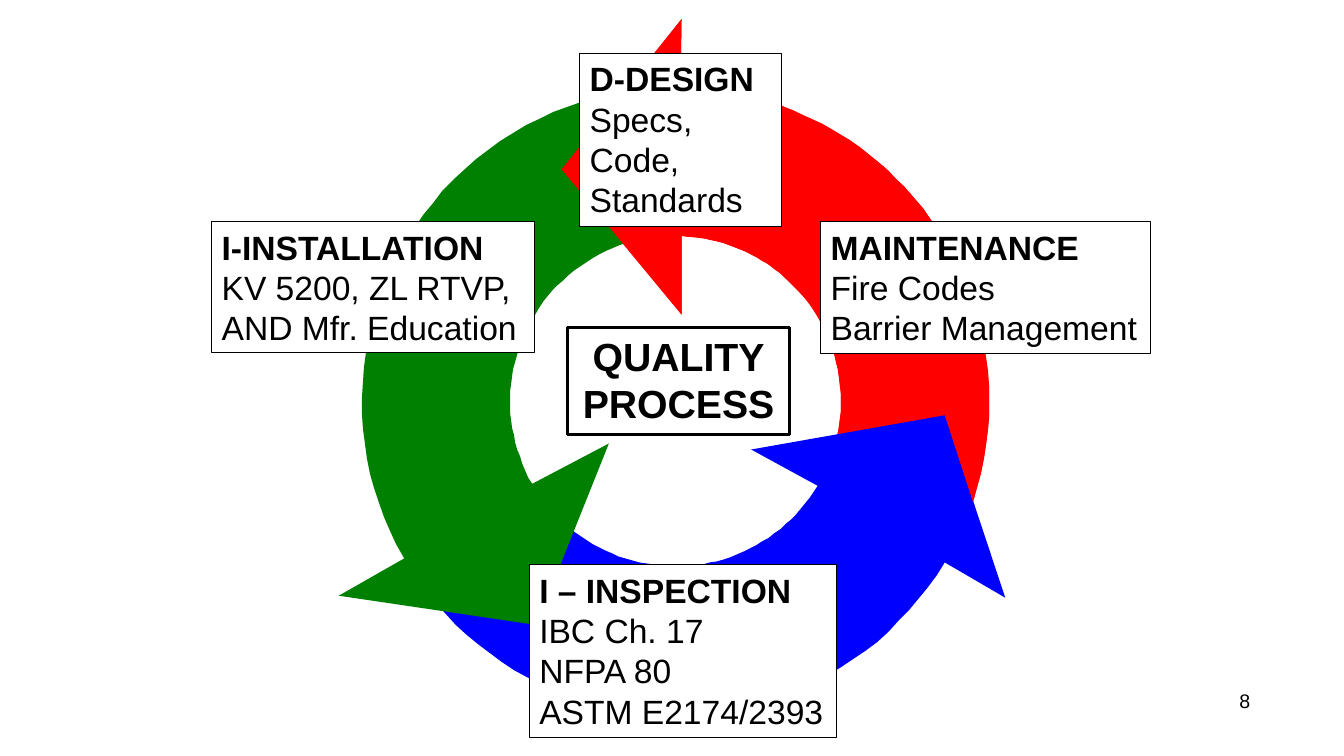
from math import cos, radians, sin

from pptx import Presentation
from pptx import util as u
from pptx.dml.color import RGBColor
from pptx.enum import shapes, text

PX = 9144  # EMU per px, 100 px to the inch
FONT = "Arial"
BLACK = RGBColor(0, 0, 0)
WHITE = RGBColor(255, 255, 255)
RED = RGBColor(255, 0, 0)
GREEN = RGBColor(0, 128, 0)
BLUE = RGBColor(0, 0, 255)
ARC_STEPS = 40


def px(length):
    return u.Emu(length * PX)


def arc(radius, start, end):
    """Points of an arc around (0, 0), in degrees clockwise from the right."""
    angles = [radians(start + (end - start) * i / ARC_STEPS) for i in range(ARC_STEPS + 1)]
    return [(radius * cos(a), radius * sin(a)) for a in angles]


def add_ring_arrow(slide, box, colour, outer, inner, head, notch=()):
    """Arc angles run from tail to head; head and notch are offsets from the centre."""
    left, top, size, band = box
    radius = size / 2
    outline = arc(radius, *outer) + head + arc(radius - band, *inner)[::-1] + list(notch)
    points = [(round(left + radius + x), round(top + radius + y)) for x, y in outline]
    builder = slide.shapes.build_freeform(*points[0], scale=PX)
    builder.add_line_segments(points[1:], close=True)
    arrow = builder.convert_to_shape()
    arrow.shadow.inherit = False
    arrow.fill.solid()
    arrow.fill.fore_color.rgb = colour
    arrow.line.fill.background()


def add_ring(slide, box):
    red_head = [(6, -379), (-113, -230), (6, -86)]
    blue_head = [(327, 195), (267, 14), (75, 48)]
    green_head = [(-334, 193), (-138, 222), (-66, 42)]
    add_ring_arrow(slide, box, RED, (30, -89), (30, -88), red_head)
    add_ring_arrow(slide, box, BLUE, (140, 31), (130, 31), blue_head)
    add_ring_arrow(slide, box, GREEN, (261, 150), (253, 150), green_head)
    # Red again, cut behind the blue head, so that its own head covers green
    add_ring_arrow(slide, box, RED, (18.7, -89), (11.2, -88), red_head, [(267, 13)])


def write_lines(frame, lines, size, bold_lines, alignment):
    for index, line in enumerate(lines):
        paragraph = frame.paragraphs[0] if index == 0 else frame.add_paragraph()
        paragraph.alignment = alignment
        run = paragraph.add_run()
        run.text = line
        run.font.name = FONT
        run.font.size = u.Pt(size)
        run.font.bold = index < bold_lines
        run.font.color.rgb = BLACK


def add_label(slide, box, lines, wrap=False, size=24, bold_lines=1, border=0.75,
              fill=WHITE, alignment=text.PP_ALIGN.LEFT):
    label = slide.shapes.add_shape(shapes.MSO_SHAPE.RECTANGLE, *map(px, box))
    label.shadow.inherit = False
    if fill is None:
        label.fill.background()
    else:
        label.fill.solid()
        label.fill.fore_color.rgb = fill
    label.line.color.rgb = BLACK
    label.line.width = u.Pt(border)
    frame = label.text_frame
    frame.word_wrap = wrap
    frame.auto_size = text.MSO_AUTO_SIZE.SHAPE_TO_FIT_TEXT
    frame.vertical_anchor = text.MSO_ANCHOR.TOP
    write_lines(frame, lines, size, bold_lines, alignment)


def add_page_number(slide, box, number):
    frame = slide.shapes.add_textbox(*map(px, box)).text_frame
    frame.word_wrap = True
    frame.vertical_anchor = text.MSO_ANCHOR.MIDDLE
    write_lines(frame, [number], 14, 0, text.PP_ALIGN.RIGHT)


def build_quality_slide(presentation):
    slide = presentation.slides.add_slide(presentation.slide_layouts[6])
    # Cycle of three arrows: left, top, diameter, band width
    add_ring(slide, (359, 87, 622, 147))
    # Centre title
    add_label(slide, (563, 325, 220, 106), ["QUALITY", "PROCESS"], size=28, bold_lines=2,
              border=2, fill=None, alignment=text.PP_ALIGN.CENTER)
    add_page_number(slide, (1150, 680, 100, 30), "8")
    # Stage labels
    add_label(slide, (575, 53, 200, 172), ["D-DESIGN", "Specs, Code, Standards"], wrap=True)
    add_label(slide, (210, 220, 320, 130),
              ["I-INSTALLATION", "KV 5200, ZL RTVP, AND Mfr. Education"], wrap=True)
    add_label(slide, (814, 220, 327, 131), ["MAINTENANCE", "Fire Codes", "Barrier Management"])
    add_label(slide, (525, 560, 305, 172),
              ["I – INSPECTION", "IBC Ch. 17", "NFPA 80", "ASTM E2174/2393"])


def main():
    presentation = Presentation()
    presentation.slide_width = px(1333)
    presentation.slide_height = px(750)
    build_quality_slide(presentation)
    presentation.save("out.pptx")


if __name__ == "__main__":
    main()
